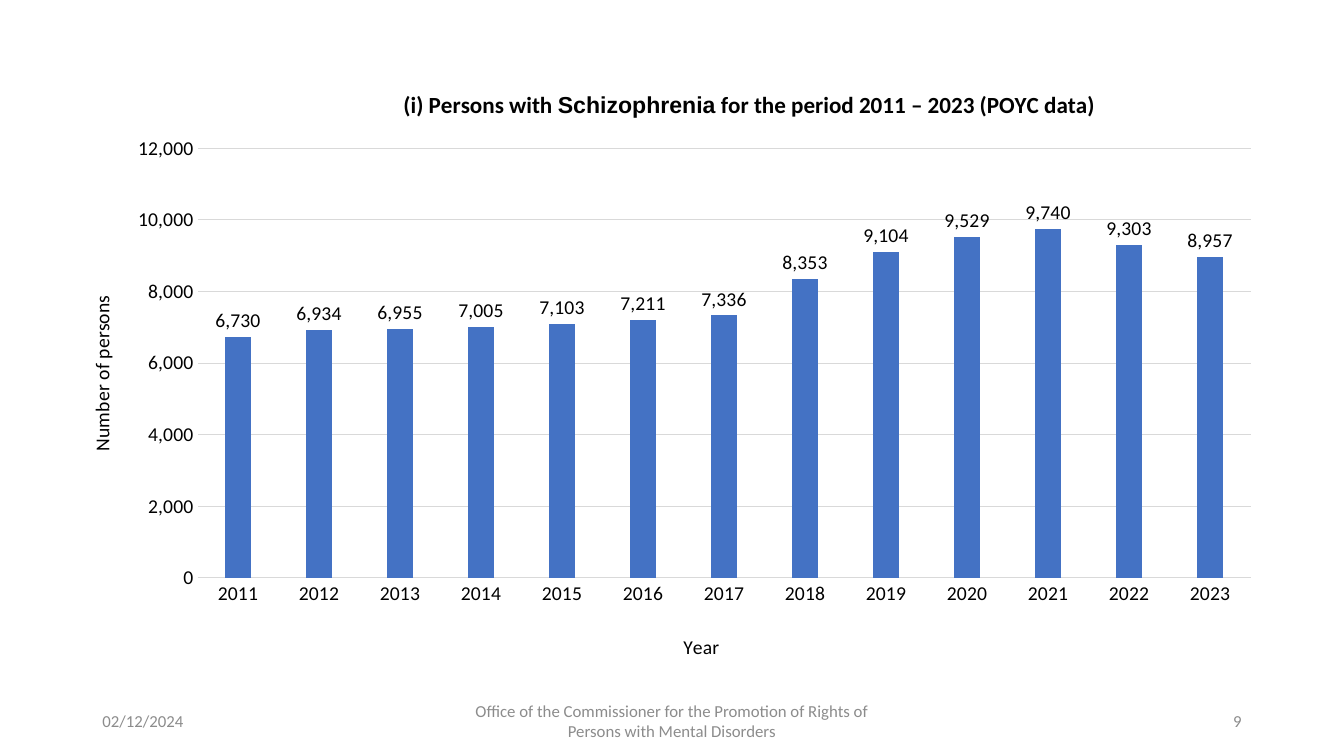
from pptx import Presentation
from pptx.chart.data import CategoryChartData
from pptx.dml.color import RGBColor
from pptx.enum.chart import XL_CHART_TYPE as ChartType, XL_LABEL_POSITION as LabelPosition, XL_TICK_MARK as TickMark
from pptx.enum.text import MSO_ANCHOR as Anchor, PP_ALIGN as Align
from pptx.oxml import parse_xml
from pptx.util import Cm, Pt


def add_text(paragraph, text, size=14, color="000000", font="Calibri", bold=False):
    run = paragraph.add_run()
    run.text = text
    run.font.size = Pt(size)
    run.font.name = font
    run.font.bold = bold
    run.font.color.rgb = RGBColor.from_string(color)


def set_layout(element, index, **values):
    for layout in element.findall("{*}layout"):
        element.remove(layout)
    modes = {"xMode": "edge", "yMode": "edge"}
    if "w" in values:
        modes = {"layoutTarget": "inner", **modes}
    tags = "".join(f'<c:{tag} val="{value}"/>' for tag, value in {**modes, **values}.items())
    namespace = "http://schemas.openxmlformats.org/drawingml/2006/chart"
    element.insert(index, parse_xml(
        f'<c:layout xmlns:c="{namespace}"><c:manualLayout>{tags}</c:manualLayout></c:layout>'))


presentation = Presentation()
presentation.slide_width = Cm(33.87)
presentation.slide_height = Cm(19.05)
slide = presentation.slides.add_slide(presentation.slide_layouts[6])

footers = [
    (2.33, 7.62, Align.LEFT, "02/12/2024"),
    (11.22, 11.43, Align.CENTER,
     "Office of the Commissioner for the Promotion of Rights of Persons with Mental Disorders"),
    (23.92, 7.62, Align.RIGHT, "9"),
]
for left, width, alignment, text in footers:
    frame = slide.shapes.add_textbox(Cm(left), Cm(17.66), Cm(width), Cm(1.01)).text_frame
    frame.word_wrap = True
    frame.vertical_anchor = Anchor.MIDDLE
    frame.paragraphs[0].alignment = alignment
    add_text(frame.paragraphs[0], text, size=12, color="8C8C8C")

persons = [6730, 6934, 6955, 7005, 7103, 7211, 7336, 8353, 9104, 9529, 9740, 9303, 8957]
data = CategoryChartData(number_format="#,##0")
data.categories = [str(year) for year in range(2011, 2024)]
data.add_series("Series 1", persons)
chart = slide.shapes.add_chart(
    ChartType.COLUMN_CLUSTERED, Cm(1.52), Cm(1.73), Cm(30.61), Cm(15.19), data).chart
chart.has_legend = False
chart.font.size = Pt(14)
chart.font.name = "Calibri"
chart.font.color.rgb = RGBColor.from_string("000000")

title = chart.chart_title
paragraph = title.text_frame.paragraphs[0]
add_text(paragraph, "(i) Persons with ", size=16.5, bold=True)
add_text(paragraph, "Schizophrenia", size=16.5, font="Arial", bold=True)
add_text(paragraph, " for the period 2011 – 2023 (POYC data)", size=16.5, bold=True)
set_layout(title._element, 1, x=0.28, y=0.03)

plot = chart.plots[0]
plot.gap_width = 219
plot.overlap = -27
plot.vary_by_categories = False
columns = plot.series[0].format.fill
columns.solid()
columns.fore_color.rgb = RGBColor.from_string("4472C4")
plot.has_data_labels = True
labels = plot.data_labels
labels.show_value = True
labels.position = LabelPosition.OUTSIDE_END
labels.number_format = "#,##0"
labels.number_format_is_linked = False
labels.font.size = Pt(14)

year_axis, person_axis = chart.category_axis, chart.value_axis
for axis, text, x, y in [(year_axis, "Year", 0.51, 0.93),
                         (person_axis, "Number of persons", 0.02, 0.37)]:
    axis.major_tick_mark = axis.minor_tick_mark = TickMark.NONE
    add_text(axis.axis_title.text_frame.paragraphs[0], text)
    set_layout(axis.axis_title._element, 1, x=x, y=y)
person_axis.axis_title.text_frame._txBody.bodyPr.set("rot", "-5400000")
person_axis.minimum_scale = 0
person_axis.maximum_scale = 12000
person_axis.major_unit = 2000
person_axis.tick_labels.number_format = "#,##0"
person_axis.tick_labels.number_format_is_linked = False
person_axis.format.line.fill.background()
for line in (year_axis.format.line, person_axis.major_gridlines.format.line):
    line.color.rgb = RGBColor.from_string("D9D9D9")
    line.width = Pt(0.75)
set_layout(chart._chartSpace.chart.plotArea, 0, x=0.113, y=0.132, w=0.867, h=0.713)

presentation.save("out.pptx")
